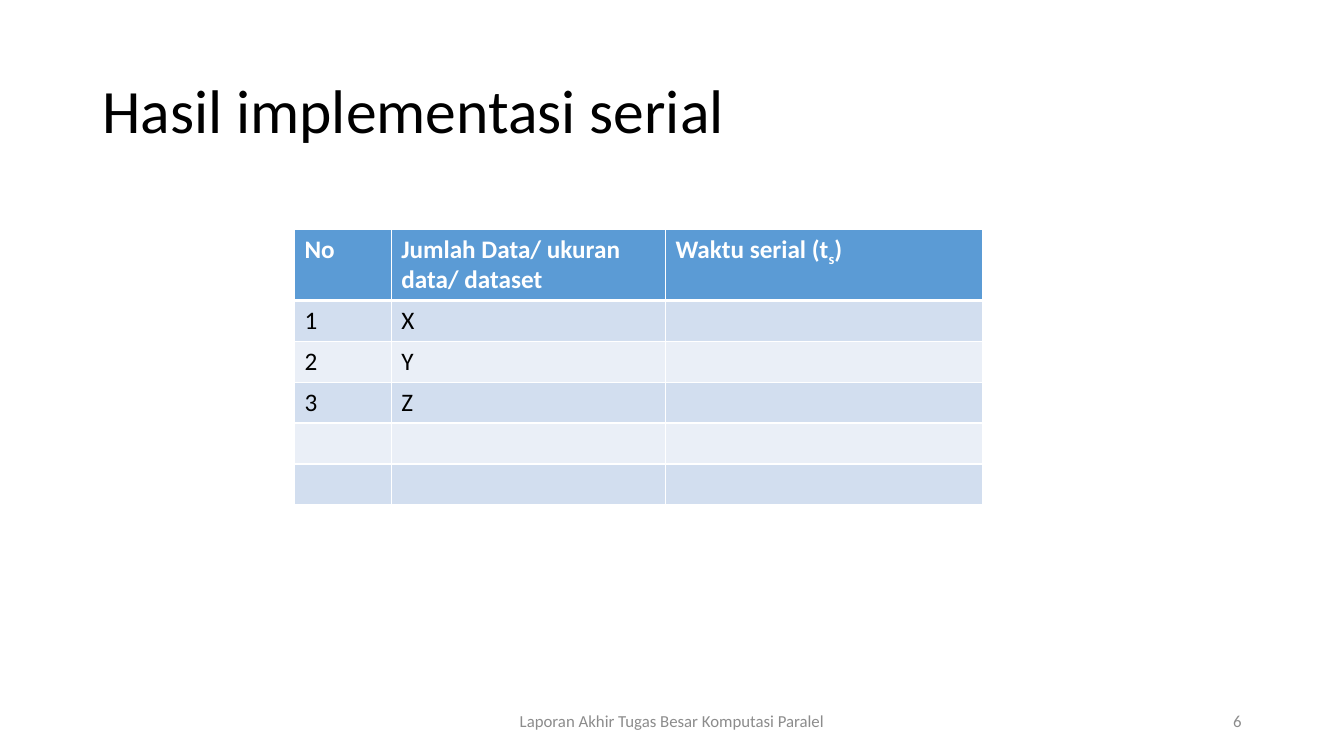
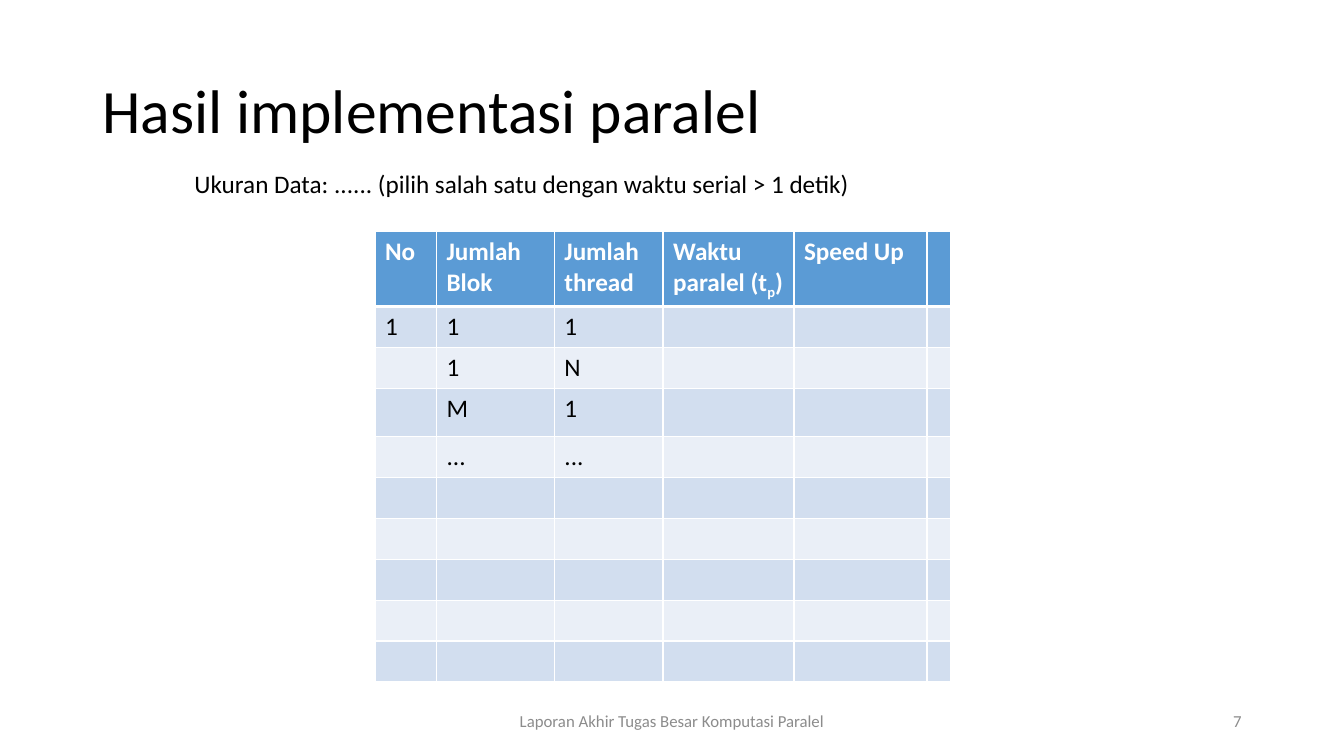
from dataclasses import dataclass

from lxml import etree
from pptx import Presentation
from pptx.dml.color import RGBColor
from pptx.enum.text import MSO_ANCHOR, PP_ALIGN
from pptx.oxml.ns import qn
from pptx.util import Cm, Pt

TOP, MIDDLE = MSO_ANCHOR.TOP, MSO_ANCHOR.MIDDLE
LEFT, CENTER, RIGHT = PP_ALIGN.LEFT, PP_ALIGN.CENTER, PP_ALIGN.RIGHT

COLORS = {
    "text": "000000",
    "footer": "8C8C8C",
    "white": "FFFFFF",
    "header": "5B9BD5",
    "odd": "D2DEEF",
    "even": "EAEFF7",
}
FONT = "Calibri"
FOOTER = "Laporan Akhir Tugas Besar Komputasi Paralel"
FIRST_PAGE = 6
THIN, THICK = 1, 3


@dataclass(frozen=True)
class TextStyle:
    size: int
    color: str = "text"
    bold: bool = False
    align: PP_ALIGN = LEFT
    anchor: MSO_ANCHOR = TOP
    spacing: float = 1.0


@dataclass(frozen=True)
class Box:
    left: float
    top: float
    width: float
    height: float


@dataclass(frozen=True)
class ResultTable:
    left: float
    top: float
    widths: tuple[float, ...]
    heights: tuple[float, ...]
    rows: tuple[tuple[str, ...], ...]


@dataclass(frozen=True)
class ResultSlide:
    title: str
    table: ResultTable
    note: str = ""


TITLE_STYLE = TextStyle(44, anchor=MIDDLE, spacing=0.9)
BODY_STYLE = TextStyle(18)
HEADER_STYLE = TextStyle(18, "white", bold=True)
FOOTER_STYLE = TextStyle(12, "footer", align=CENTER, anchor=MIDDLE)
PAGE_STYLE = TextStyle(12, "footer", align=RIGHT, anchor=MIDDLE)

TITLE_BOX = Box(2.33, 1.01, 29.21, 3.68)
NOTE_BOX = Box(4.65, 4.11, 21.77, 1.02)
FOOTER_BOX = Box(11.22, 17.65, 11.43, 1.01)
PAGE_BOX = Box(23.92, 17.65, 7.62, 1.01)

ROW = 1.03
SLIDES = (
    ResultSlide(
        "Hasil implementasi serial",
        ResultTable(
            7.42, 5.77,
            (2.44, 6.91, 7.98),
            (1.8,) + (ROW,) * 5,
            (
                ("No", "Jumlah Data/ ukuran data/ dataset", "Waktu serial (t_s_)"),
                ("1", "X"),
                ("2", "Y"),
                ("3", "Z"),
            ),
        ),
    ),
    ResultSlide(
        "Hasil implementasi paralel",
        ResultTable(
            9.45, 5.84,
            (1.55, 2.97, 2.74, 3.3, 3.35, 0.58),
            (1.88, ROW, ROW, 1.22) + (ROW,) * 6,
            (
                ("No", "Jumlah Blok", "Jumlah thread", "Waktu paralel (t_p_)", "Speed Up"),
                ("1", "1", "1"),
                ("", "1", "N"),
                ("", "M", "1"),
                ("", "...", "..."),
            ),
        ),
        "Ukuran Data: ...... (pilih salah satu dengan waktu serial > 1 detik)",
    ),
)


def rgb(name: str) -> RGBColor:
    return RGBColor.from_string(COLORS[name])


def write(tf, text: str, style: TextStyle) -> None:
    p = tf.paragraphs[0]
    p.alignment, p.line_spacing = style.align, style.spacing
    font_format = {"name": FONT, "size": Pt(style.size), "bold": style.bold}
    for i, part in enumerate(text.split("_")):
        if not part:
            continue
        r = p.add_run()
        r.text = part
        for name, value in font_format.items():
            setattr(r.font, name, value)
        r.font.color.rgb = rgb(style.color)
        if i % 2:
            r.font._element.set("baseline", "-25000")


def add_text(s, box: Box, text: str, style: TextStyle) -> None:
    sp = s.shapes.add_textbox(Cm(box.left), Cm(box.top), Cm(box.width), Cm(box.height))
    tf = sp.text_frame
    tf.word_wrap = True
    tf.vertical_anchor = style.anchor
    write(tf, text, style)


def set_borders(cell, top: int, bottom: int) -> None:
    tc_pr = cell._tc.get_or_add_tcPr()
    for side, width in {"L": THIN, "R": THIN, "T": top, "B": bottom}.items():
        ln = etree.SubElement(tc_pr, qn(f"a:ln{side}"), w=str(Pt(width)))
        fill = etree.SubElement(ln, qn("a:solidFill"))
        etree.SubElement(fill, qn("a:srgbClr"), val=COLORS["white"])


def add_result_table(s, spec: ResultTable) -> None:
    table = s.shapes.add_table(
        len(spec.heights), len(spec.widths), Cm(spec.left), Cm(spec.top),
        Cm(sum(spec.widths)), Cm(sum(spec.heights)),
    ).table
    for column, width in zip(table.columns, spec.widths):
        column.width = Cm(width)
    for i, (row, height) in enumerate(zip(table.rows, spec.heights)):
        row.height = Cm(height)
        texts = spec.rows[i] if i < len(spec.rows) else ()
        band = "header" if i == 0 else "odd" if i % 2 else "even"
        for j, cell in enumerate(row.cells):
            set_borders(cell, THICK if i == 1 else THIN, THICK if i == 0 else THIN)
            cell.fill.solid()
            cell.fill.fore_color.rgb = rgb(band)
            if j < len(texts):
                write(cell.text_frame, texts[j], BODY_STYLE if i else HEADER_STYLE)


def add_result_slide(prs, content: ResultSlide, page: int) -> None:
    s = prs.slides.add_slide(prs.slide_layouts[6])
    add_text(s, TITLE_BOX, content.title, TITLE_STYLE)
    add_result_table(s, content.table)
    add_text(s, FOOTER_BOX, FOOTER, FOOTER_STYLE)
    add_text(s, PAGE_BOX, str(page), PAGE_STYLE)
    if content.note:
        add_text(s, NOTE_BOX, content.note, BODY_STYLE)


def main() -> None:
    prs = Presentation()
    prs.slide_width, prs.slide_height = Cm(33.87), Cm(19.05)
    for page, content in enumerate(SLIDES, FIRST_PAGE):
        add_result_slide(prs, content, page)
    prs.save("out.pptx")


if __name__ == "__main__":
    main()
